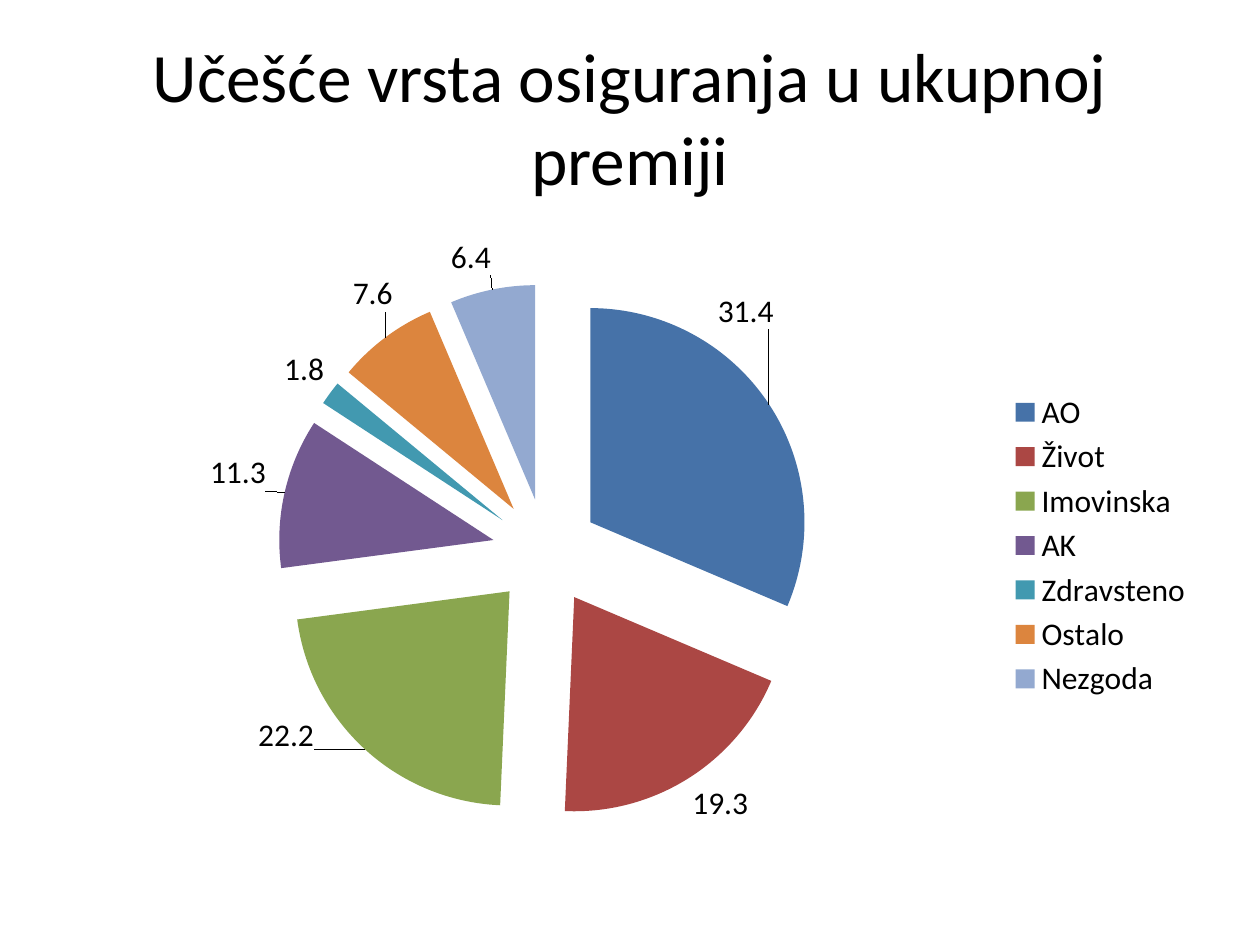
from typing import NamedTuple

from lxml import etree
from pptx import Presentation
from pptx.chart.data import CategoryChartData
from pptx.dml.color import RGBColor
from pptx.enum.chart import XL_CHART_TYPE, XL_LABEL_POSITION, XL_LEGEND_POSITION
from pptx.enum.text import MSO_ANCHOR, PP_ALIGN
from pptx.oxml.ns import qn
from pptx.util import Inches, Pt

PIE = XL_CHART_TYPE.PIE
OUTSIDE = XL_LABEL_POSITION.OUTSIDE_END
LEGEND_RIGHT = XL_LEGEND_POSITION.RIGHT
MIDDLE = MSO_ANCHOR.MIDDLE
CENTER = PP_ALIGN.CENTER

FONT = "Calibri"
EXPLOSION = 25
COLORS = {
    "text": "000000",
    "blue": "4672A8",
    "red": "AB4744",
    "green": "8AA64F",
    "purple": "725990",
    "teal": "4299B0",
    "orange": "DC853E",
    "light blue": "93A9D0",
}


class Slice(NamedTuple):
    name: str
    share: float
    color: str
    label_shift: tuple[float, float] = (0, 0)  # fractions of the chart size


SLICES = [
    Slice("AO", 31.4, "blue", (-0.05, -0.11)),
    Slice("Život", 19.3, "red"),
    Slice("Imovinska", 22.2, "green", (-0.04, -0.06)),
    Slice("AK", 11.3, "purple", (-0.01, 0)),
    Slice("Zdravsteno", 1.8, "teal"),
    Slice("Ostalo", 7.6, "orange", (0.01, -0.03)),
    Slice("Nezgoda", 6.4, "light blue", (0, -0.01)),
]


def rgb(name: str) -> RGBColor:
    return RGBColor.from_string(COLORS[name])


def style_font(font, size: float, color: str = "text") -> None:
    font.name = FONT
    font.size = Pt(size)
    font.color.rgb = rgb(color)


def write_text(shape, text: str, *, size: float, align=CENTER, anchor=MIDDLE) -> None:
    frame = shape.text_frame
    frame.word_wrap = True
    frame.vertical_anchor = anchor
    paragraph = frame.paragraphs[0]
    paragraph.alignment = align
    run = paragraph.add_run()
    run.text = text
    style_font(run.font, size)


def manual_layout(**values: str | float):
    layout = etree.Element(qn("c:layout"))
    manual = etree.SubElement(layout, qn("c:manualLayout"))
    for tag, value in values.items():
        etree.SubElement(manual, qn(f"c:{tag}")).set("val", str(value))
    return layout


def format_slice(point, part: Slice) -> None:
    point.format.fill.solid()
    point.format.fill.fore_color.rgb = rgb(part.color)
    label = point.data_label
    label.position = OUTSIDE
    if any(part.label_shift):
        x, y = part.label_shift
        label_xml = label._dLbl
        label_xml.find(qn("c:idx")).addnext(manual_layout(x=x, y=y))


def add_share_chart(slide, slices: list[Slice]) -> None:
    data = CategoryChartData(number_format="0.0")
    data.categories = [part.name for part in slices]
    data.add_series("Series 1", [part.share for part in slices])
    chart = slide.shapes.add_chart(
        PIE, Inches(0.46), Inches(1.8), Inches(9.11), Inches(5.06), data
    ).chart
    style_font(chart.font, 18)
    chart.has_title = False
    chart.has_legend = True
    chart.legend.position = LEGEND_RIGHT
    chart.legend.include_in_layout = False

    # Slices and their labels
    plot = chart.plots[0]
    plot.vary_by_categories = True
    series = plot.series[0]
    labels = series.data_labels
    labels.show_value = True
    labels.position = OUTSIDE
    style_font(labels.font, 18)
    for index, part in enumerate(slices):
        format_slice(series.points[index], part)

    # Pulled-apart slices
    explosion = etree.Element(qn("c:explosion"))
    explosion.set("val", str(EXPLOSION))
    series._element.find(qn("c:dPt")).addprevious(explosion)

    # Pie area
    plot_area = chart._chartSpace.chart.plotArea
    for old_layout in plot_area.findall(qn("c:layout")):
        plot_area.remove(old_layout)
    plot_area.insert(0, manual_layout(
        layoutTarget="inner", xMode="edge", yMode="edge",
        x=0.19, y=0.09, w=0.47, h=0.84,
    ))


def main() -> None:
    prs = Presentation()
    prs.slide_width, prs.slide_height = Inches(10), Inches(7.5)
    slide = prs.slides.add_slide(prs.slide_layouts[5])

    # Title
    title = slide.shapes.title
    title.left, title.top = Inches(0.5), Inches(0.3)
    title.width, title.height = Inches(9), Inches(1.25)
    write_text(title, "Učešće vrsta osiguranja u ukupnoj premiji", size=39.6)

    # Shares of the total premium
    add_share_chart(slide, SLICES)
    prs.save("out.pptx")


if __name__ == "__main__":
    main()
